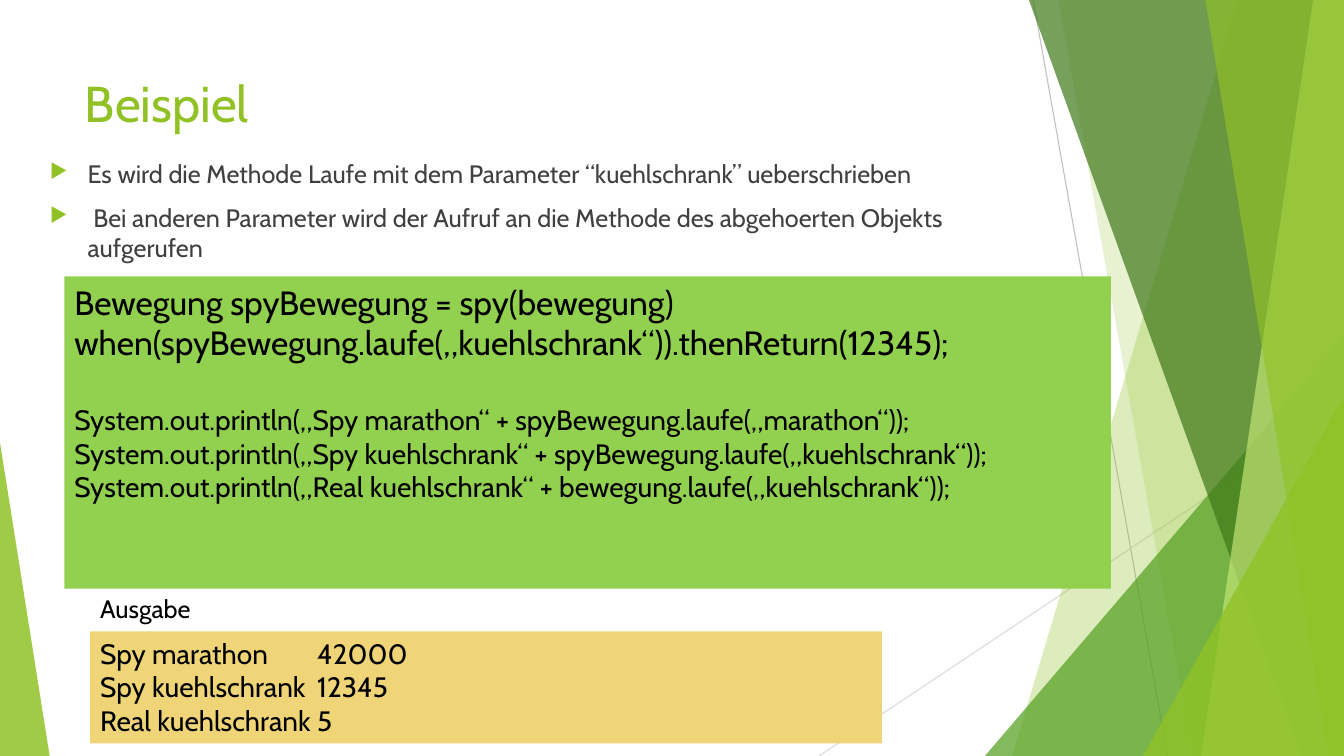
from pptx import Presentation
from pptx.dml.color import RGBColor
from pptx.enum.shapes import MSO_CONNECTOR, MSO_SHAPE
from pptx.enum.text import MSO_ANCHOR, MSO_AUTO_SIZE, PP_ALIGN
from pptx.oxml.ns import qn
from pptx.util import Pt
from lxml.etree import SubElement

COLORS = {
    "lime": "90C226", "green": "54A021", "forest": "3F7819", "pale": "C0E474",
    "code": "92D050", "output": "F0D578", "text": "404040", "black": "000000",
    "line": "BFBFBF", "faint": "D9D9D9",
}
FONT = "Cabin"
WIDTH, HEIGHT = 960, 540


def rgb(name):
    return RGBColor.from_string(COLORS[name])


def style_fill(shape, color, opacity=100):
    shape.shadow.inherit = False
    shape.line.fill.background()
    shape.fill.solid()
    shape.fill.fore_color.rgb = rgb(color)
    if opacity < 100:
        color_element = shape.element.spPr.find(qn("a:solidFill"))[0]
        SubElement(color_element, qn("a:alpha"), val=str(opacity * 1000))


def add_line(slide, start, end, color):
    line = slide.shapes.add_connector(
        MSO_CONNECTOR.STRAIGHT, *[Pt(value) for value in start + end])
    line.line.color.rgb = rgb(color)
    line.line.width = Pt(0.75)
    SubElement(line.element.spPr, qn("a:effectLst"))


def add_band(slide, top_x, bottom_x, color, opacity):
    """Band from a slanted left edge to the right side of the slide."""
    builder = slide.shapes.build_freeform(top_x, 0, scale=Pt(1))
    builder.add_line_segments([(WIDTH, 0), (WIDTH, HEIGHT), (bottom_x, HEIGHT)])
    style_fill(builder.convert_to_shape(), color, opacity)


def add_corner(slide, left, top, width, apex, color, opacity):
    """Triangle standing on the bottom edge of the slide."""
    triangle = slide.shapes.add_shape(
        MSO_SHAPE.ISOSCELES_TRIANGLE, Pt(left), Pt(top), Pt(width), Pt(HEIGHT - top))
    triangle.adjustments[0] = apex
    style_fill(triangle, color, opacity)


def write(shape, lines, color, wrap=True):
    """Fill a shape with (text, size, space before) lines."""
    frame = shape.text_frame
    frame.word_wrap = wrap
    frame.auto_size = MSO_AUTO_SIZE.NONE
    frame.vertical_anchor = MSO_ANCHOR.TOP
    for index, (text, size, space) in enumerate(lines):
        paragraph = frame.paragraphs[0] if index == 0 else frame.add_paragraph()
        paragraph.alignment = PP_ALIGN.LEFT
        paragraph.space_before = Pt(space)
        run = paragraph.add_run()
        run.text = text
        run.font.name = FONT
        run.font.size = Pt(size)
        run.font.color.rgb = rgb(color)
    return frame.paragraphs


def add_text(slide, box, lines, color, wrap=True):
    shape = slide.shapes.add_textbox(*[Pt(value) for value in box])
    return write(shape, lines, color, wrap)


def add_panel(slide, box, fill, lines):
    panel = slide.shapes.add_shape(MSO_SHAPE.RECTANGLE, *[Pt(value) for value in box])
    style_fill(panel, fill)
    return write(panel, lines, "black")


def add_bullet(paragraph):
    properties = paragraph._p.get_or_add_pPr()
    properties.set("marL", str(Pt(27)))
    properties.set("indent", str(Pt(-27)))
    bullet_color = SubElement(properties, qn("a:buClr"))
    SubElement(bullet_color, qn("a:srgbClr"), val=COLORS["lime"])
    SubElement(properties, qn("a:buSzPct"), val="80000")
    SubElement(properties, qn("a:buChar"), char="▶")


def add_tab_stop(paragraph, position):
    tabs = SubElement(paragraph._p.get_or_add_pPr(), qn("a:tabLst"))
    SubElement(tabs, qn("a:tab"), pos=str(Pt(position)), algn="l")


def add_decoration(slide):
    add_line(slide, (738, 0), (834, HEIGHT), "line")
    add_line(slide, (WIDTH, 290), (585, HEIGHT), "faint")
    add_band(slide, 884, 723, "lime", 30)
    add_band(slide, 756, 852, "lime", 20)
    add_corner(slide, 703.5, 240, 256.5, 1, "green", 72)
    add_band(slide, 735, 929.5, "forest", 70)
    add_band(slide, 938, 858, "pale", 70)
    add_band(slide, 861, 949, "lime", 65)
    add_corner(slide, 816.5, 283, 143.5, 1, "lime", 80)
    add_corner(slide, 0, 316, 35.5, 0, "lime", 85)


def add_title(slide, text):
    title = slide.shapes.title
    title.left, title.top, title.width, title.height = Pt(53.5), Pt(48), Pt(677), Pt(104)
    write(title, [(text, 36, 0)], "lime")
    # Bring the title in front of the decoration
    title.element.getparent().append(title.element)


def main():
    presentation = Presentation()
    presentation.slide_width, presentation.slide_height = Pt(WIDTH), Pt(HEIGHT)
    slide = presentation.slides.add_slide(presentation.slide_layouts[5])

    add_decoration(slide)
    add_title(slide, "Beispiel")

    # Explanation
    bullets = add_text(slide, (28.5, 109.5, 677, 305), [
        ("Es wird die Methode Laufe mit dem Parameter “kuehlschrank” ueberschrieben", 18, 10),
        (" Bei anderen Parameter wird der Aufruf an die Methode des abgehoerten Objekts aufgerufen",
         18, 10),
    ], "text")
    for paragraph in bullets:
        add_bullet(paragraph)

    # Code
    add_panel(slide, (46, 197.5, 747.5, 223), "code", [
        ("Bewegung spyBewegung = spy(bewegung)", 24, 0),
        ("when(spyBewegung.laufe(„kuehlschrank“)).thenReturn(12345);", 24, 0),
        ("System.out.println(„Spy marathon“ + spyBewegung.laufe(„marathon“));", 20, 29),
        ("System.out.println(„Spy kuehlschrank“ + spyBewegung.laufe(„kuehlschrank“));", 20, 0),
        ("System.out.println(„Real kuehlschrank“ + bewegung.laufe(„kuehlschrank“));", 20, 0),
    ])

    # Output, with its values on a common tab stop
    results = [("Spy marathon", "42000"), ("Spy kuehlschrank", "12345"),
               ("Real kuehlschrank", "5")]
    output = add_panel(slide, (64.5, 451, 565.5, 80), "output",
                       [(f"{label}\t{value}", 20, 0) for label, value in results])
    for paragraph in output:
        add_tab_stop(paragraph, 155)
    add_text(slide, (64.5, 420, 81.5, 29), [("Ausgabe", 18, 0)], "black", wrap=False)

    presentation.save("out.pptx")


if __name__ == "__main__":
    main()
